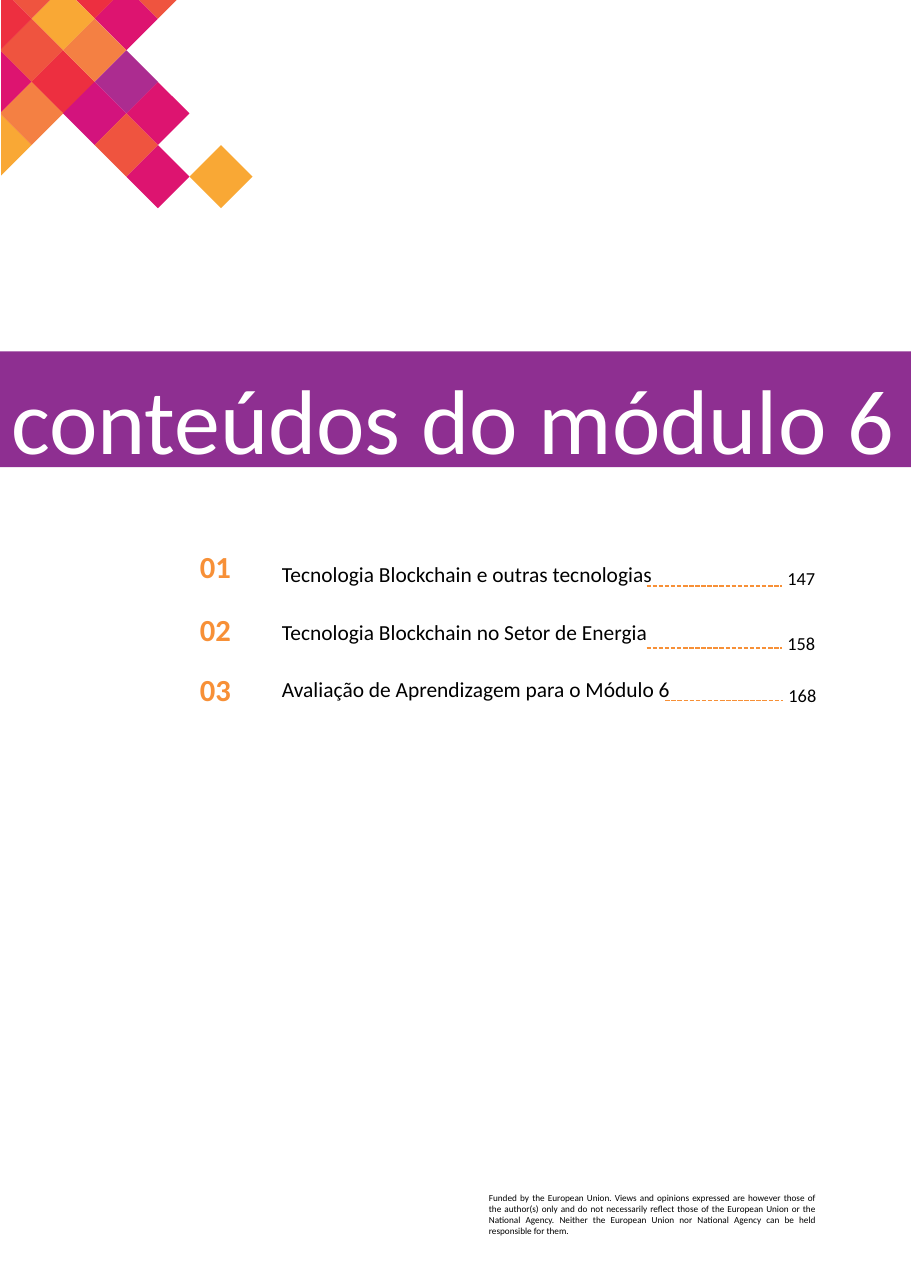
from lxml import etree
from pptx import Presentation
from pptx import util as u
from pptx.dml.color import RGBColor
from pptx.enum import dml, shapes, text
from pptx.oxml import ns

PX = 9144
PAGE_W, PAGE_H = 827, 1169

PURPLE = RGBColor(0x8E, 0x2F, 0x91)
ORANGE = RGBColor(0xF7, 0x90, 0x37)
BLACK = RGBColor(0x00, 0x00, 0x00)
WHITE = RGBColor(0xFF, 0xFF, 0xFF)
RED = RGBColor(0xED, 0x2F, 0x40)
PINK = RGBColor(0xDD, 0x14, 0x70)
CORAL = RGBColor(0xEF, 0x54, 0x3F)
AMBER = RGBColor(0xF9, 0xA8, 0x35)
PEACH = RGBColor(0xF4, 0x80, 0x43)
VIOLET = RGBColor(0xAC, 0x2C, 0x90)
MAGENTA = RGBColor(0xD3, 0x13, 0x7D)

TITLE = "conteúdos do módulo 6"
FUNDING = (
    "Funded by the European Union. Views and opinions expressed are however "
    "those of the author(s) only and do not necessarily reflect those of the "
    "European Union or the National Agency. Neither the European Union nor "
    "National Agency can be held responsible for them."
)

# number, (top), topic, (top, width), page, (left, top), leader (start, end, y)
ENTRIES = [
    (("01", 495), ("Tecnologia Blockchain e outras tecnologias", 502, 435),
     ("147", 700, 506), (587, 710, 532)),
    (("02", 552), ("Tecnologia Blockchain no Setor de Energia", 555, 388),
     ("158", 700, 565), (587, 710, 588)),
    (("03", 607), ("Avaliação de Aprendizagem para o Módulo 6", 606, 388),
     ("168", 701, 612), (604, 711, 636)),
]
NUMBER_X, TOPIC_X, ROW_H = 160, 246, 38

HALF, MOSAIC_X, MOSAIC_Y = 28.67, 1, 17
TILES = {
    (3, -1): RED, (4, 0): PINK, (5, -1): CORAL, (2, 0): AMBER,
    (1, 1): CORAL, (2, 2): RED, (3, 1): PEACH, (0, 2): PINK,
    (0, 4): AMBER, (1, 3): PEACH, (7, 5): AMBER, (5, 5): PINK,
    (5, 3): PINK, (4, 2): VIOLET, (3, 3): MAGENTA, (4, 4): CORAL,
    (1, -1): CORAL, (0, 0): RED,
}


def clip(points, axis, limit):
    kept = []
    for a, b in zip(points, points[1:] + points[:1]):
        if a[axis] >= limit:
            kept.append(a)
        if (a[axis] - limit) * (b[axis] - limit) < 0:
            t = (limit - a[axis]) / (b[axis] - a[axis])
            kept.append(tuple(p + t * (q - p) for p, q in zip(a, b)))
    return kept


def paint(sp, color):
    sp.shadow.inherit = False
    sp.fill.solid()
    sp.fill.fore_color.rgb = color
    sp.line.fill.background()


def add_tile(slide, col, row, color):
    x, y = col * HALF, MOSAIC_Y + row * HALF
    diamond = [(x, y - HALF), (x + HALF, y), (x, y + HALF), (x - HALF, y)]
    outline = clip(clip(diamond, 0, MOSAIC_X), 1, 0)
    points = [(round(px * PX), round(py * PX)) for px, py in outline]
    builder = slide.shapes.build_freeform(*points[0], scale=1.0)
    builder.add_line_segments(points[1:], close=True)
    paint(builder.convert_to_shape(), color)


def write(sp, content, size, color, align, anchor, bold=False):
    tf = sp.text_frame
    tf.text = content
    tf.word_wrap = True
    tf.auto_size = text.MSO_AUTO_SIZE.NONE
    tf.vertical_anchor = anchor
    p = tf.paragraphs[0]
    p.alignment = align
    font = p.runs[0].font
    font.name, font.size, font.bold = "Calibri", u.Pt(size), bold
    font.color.rgb = color


def add_text(slide, box, content, size, color, align,
             anchor=text.MSO_ANCHOR.MIDDLE, bold=False):
    sp = slide.shapes.add_textbox(*(v * PX for v in box))
    write(sp, content, size, color, align, anchor, bold)


def add_leader(slide, start, end, y):
    line = slide.shapes.add_connector(
        shapes.MSO_CONNECTOR.STRAIGHT, start * PX, y * PX, end * PX, y * PX)
    line.line.color.rgb = ORANGE
    line.line.width = u.Pt(1)
    line.line.dash_style = dml.MSO_LINE.SQUARE_DOT
    etree.SubElement(line._element.spPr, ns.qn("a:effectLst"))


def main():
    prs = Presentation()
    prs.slide_width, prs.slide_height = PAGE_W * PX, PAGE_H * PX
    slide = prs.slides.add_slide(prs.slide_layouts[5])
    align = text.PP_ALIGN

    band = slide.shapes.add_shape(
        shapes.MSO_SHAPE.RECTANGLE, 0, 319 * PX, PAGE_W * PX, 105 * PX)
    paint(band, PURPLE)
    add_text(slide, (434, 1077, 316, 50), FUNDING, 6, BLACK,
             align.JUSTIFY, text.MSO_ANCHOR.TOP)
    for (col, row), color in TILES.items():
        add_tile(slide, col, row, color)

    for number, topic, page, leader in ENTRIES:
        add_text(slide, (NUMBER_X, number[1], 71, ROW_H), number[0],
                 20, ORANGE, align.CENTER, bold=True)
        add_text(slide, (TOPIC_X, topic[1], topic[2], ROW_H), topic[0],
                 14, BLACK, align.LEFT)
        add_text(slide, (page[1], page[2], 50, ROW_H), page[0],
                 12, BLACK, align.RIGHT)
        add_leader(slide, *leader)

    title = slide.shapes.title
    title.left, title.top = 0, 324 * PX
    title.width, title.height = PAGE_W * PX, 106 * PX
    write(title, TITLE, 60, WHITE, align.LEFT, text.MSO_ANCHOR.TOP)
    slide.shapes._spTree.append(title._element)

    prs.save("out.pptx")


if __name__ == "__main__":
    main()
